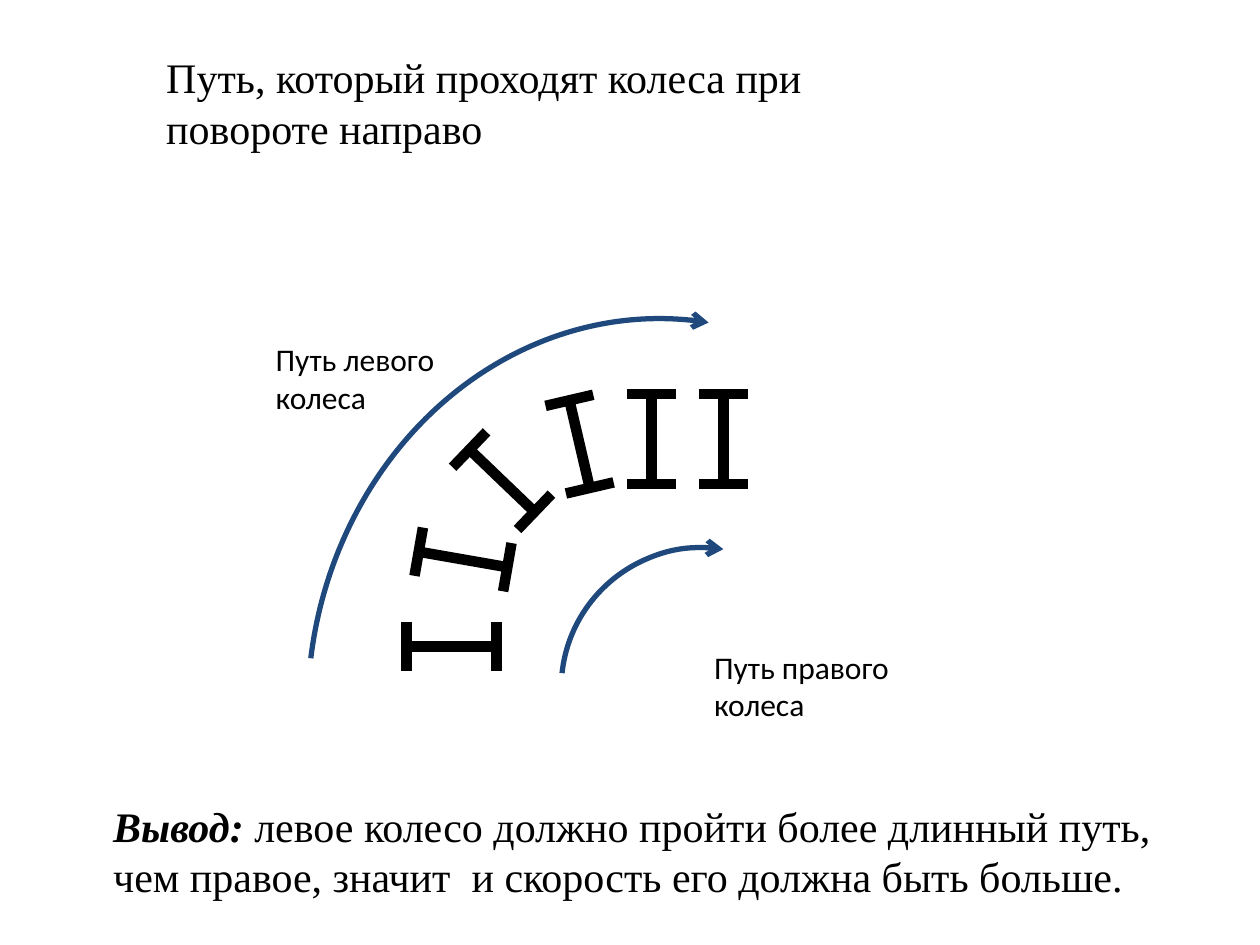
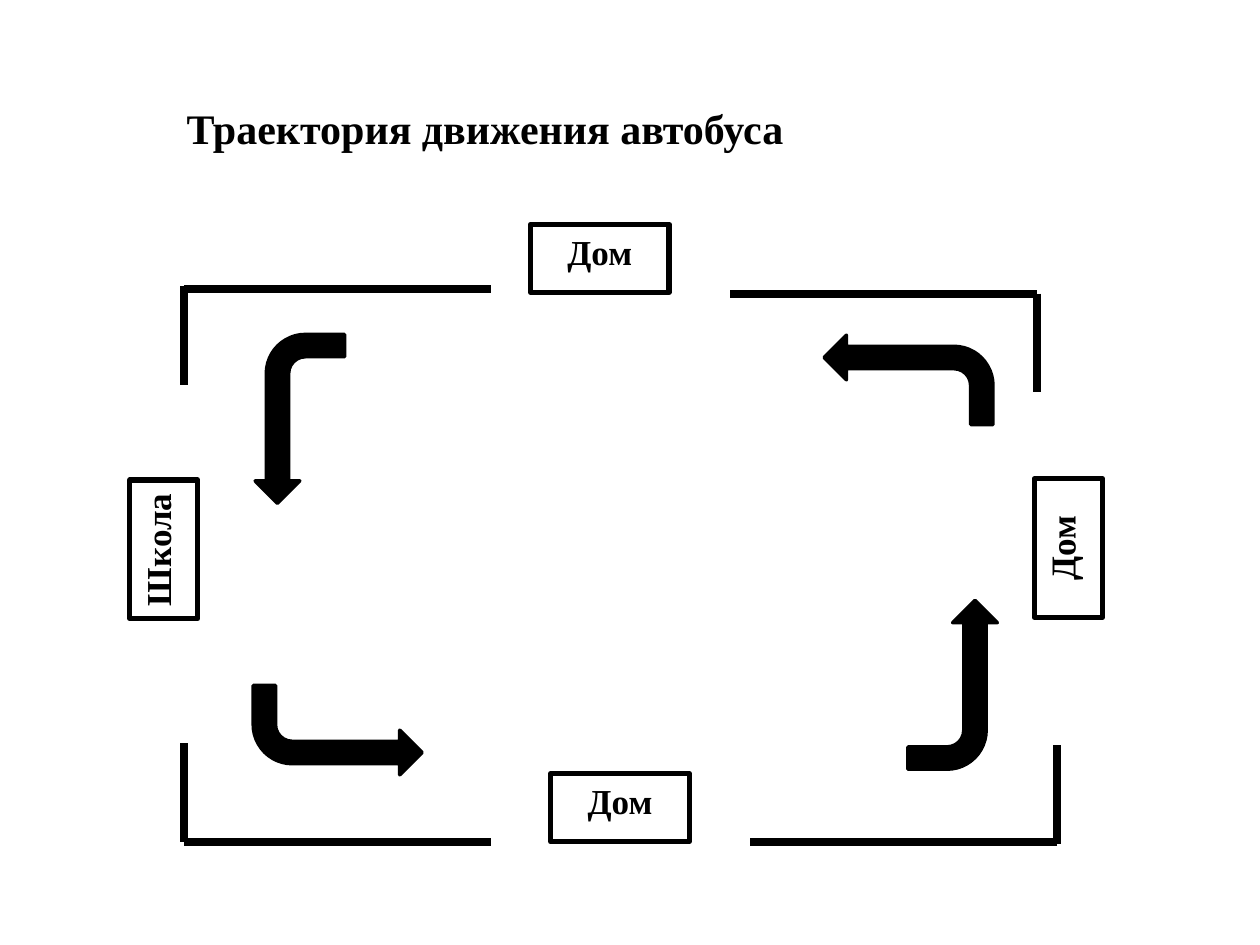
from dataclasses import dataclass
from math import cos, radians, sin

from pptx import Presentation
from pptx.dml.color import RGBColor
from pptx.enum.shapes import MSO_CONNECTOR, MSO_SHAPE
from pptx.enum.text import MSO_ANCHOR, MSO_AUTO_SIZE, PP_ALIGN
from pptx.oxml.ns import qn
from pptx.util import Pt
from lxml.etree import SubElement


@dataclass(frozen=True)
class Theme:
    ink: RGBColor = RGBColor(0x00, 0x00, 0x00)
    route: RGBColor = RGBColor(0x1F, 0x49, 0x7D)
    serif: str = "Times New Roman"
    sans: str = "Calibri"
    heading_size: int = 24
    place_size: int = 20
    label_size: int = 18
    axle_line: float = 6
    road_line: float = 4.5
    thin_line: float = 3
    arrow_line: float = 2


THEME = Theme()

HALF_AXLE = 25.7
HALF_WHEEL = 14
AXLES = [
    (258.1, 369.4, 0),
    (264.6, 319.7, 9.9),
    (286.9, 274.7, 43.8),
    (331.2, 253.8, 76.9),
    (372.2, 250.9, 90),
    (413.3, 250.9, 90),
]
WHEEL_ROUTES = [
    (321.1, 312.5, 160.6, 161.3, 162),
    (153.4, 204.5, 437.8, 392.4, 162.65),
]
WHEEL_LABELS = [
    ("Путь правого колеса", 401, 366.5),
    ("Путь левого колеса", 150.5, 190.8),
]

PLACES = [
    ("Школа", 74.2, 274.3, 0, PP_ALIGN.LEFT),
    ("Дом", 334.8, 421.9, 90, PP_ALIGN.CENTER),
    ("Дом", 591.1, 273.6, 0, PP_ALIGN.CENTER),
    ("Дом", 323.3, 108, 90, PP_ALIGN.CENTER),
]
ROAD_WIDTH = 175.7
ROAD_HEIGHT = 56.5
ROAD_CORNERS = [
    (105.1, 164.9, 1, 1, 1.4),
    (592.6, 167.8, -1, 1, 0),
    (105.1, 481, 1, -1, 0),
    (604.1, 481, -1, -1, 1.4),
]
TURNS = [
    (144.7, 391.7, 0),
    (496.1, 365.8, 270),
    (470.9, 191.5, 180),
    (123.1, 213.8, 90),
]


def write_text(shape, text, *, font=THEME.serif, size=THEME.heading_size,
               bold=False, italic=False, align=PP_ALIGN.LEFT):
    frame = shape.text_frame
    frame.word_wrap = True
    frame.auto_size = MSO_AUTO_SIZE.NONE
    frame.vertical_anchor = MSO_ANCHOR.TOP
    paragraph = frame.paragraphs[0]
    paragraph.alignment = align
    run = paragraph.add_run()
    run.text = text
    run.font.name = font
    run.font.size = Pt(size)
    run.font.bold = bold
    run.font.italic = italic
    run.font.color.rgb = THEME.ink


def add_titled_slide(deck, text, left, top, width, height, **text_format):
    slide = deck.slides.add_slide(deck.slide_layouts[5])
    title = slide.shapes.title
    title.left, title.top = Pt(left), Pt(top)
    title.width, title.height = Pt(width), Pt(height)
    write_text(title, text, **text_format)
    return slide


def add_textbox(slide, left, top, width, height):
    return slide.shapes.add_textbox(Pt(left), Pt(top), Pt(width), Pt(height))


def add_line(shapes, start, end, width):
    line = shapes.add_connector(MSO_CONNECTOR.STRAIGHT, *map(Pt, (*start, *end)))
    line.line.color.rgb = THEME.ink
    line.line.width = Pt(width)
    SubElement(line.element.spPr, qn("a:effectLst"))


def add_outline(slide, preset, left, top, width, height, *,
                line_width=THEME.thin_line, color=THEME.ink, rotation=0, fill=None):
    shape = slide.shapes.add_shape(preset, Pt(left), Pt(top), Pt(width), Pt(height))
    shape.rotation = rotation
    shape.shadow.inherit = False
    shape.line.color.rgb = color
    shape.line.width = Pt(line_width)
    if fill is None:
        shape.fill.background()
    else:
        shape.fill.solid()
        shape.fill.fore_color.rgb = fill
    return shape


def add_axle(shapes, x, y, angle):
    along = cos(radians(angle)), sin(radians(angle))
    across = -along[1], along[0]

    def add_bar(center, direction, half):
        ends = [[c + sign * half * d for c, d in zip(center, direction)]
                for sign in (-1, 1)]
        add_line(shapes, *ends, THEME.axle_line)

    add_bar((x, y), along, HALF_AXLE)
    for side in (-1, 1):
        hub = x + side * HALF_AXLE * along[0], y + side * HALF_AXLE * along[1]
        add_bar(hub, across, HALF_WHEEL)


def add_wheel_route(slide, left, top, width, height, start):
    route = add_outline(slide, MSO_SHAPE.ARC, left, top, width, height,
                        color=THEME.route, rotation=276.1)
    route.adjustments[0] = start
    route.adjustments[1] = 1.49
    SubElement(route.element.spPr.find(qn("a:ln")), qn("a:tailEnd"), type="arrow")


def add_place(slide, name, left, top, rotation, align):
    place = add_outline(slide, MSO_SHAPE.RECTANGLE, left, top, 38.9, 79.2,
                        rotation=rotation)
    write_text(place, name, size=THEME.place_size, bold=True, align=align)
    place.element.txBody.find(qn("a:bodyPr")).set("vert", "vert270")


def add_road_corner(slide, x, y, right, down, overhang):
    add_line(slide.shapes, (x, y), (x + right * ROAD_WIDTH, y), THEME.road_line)
    edge = y - down * overhang
    add_line(slide.shapes, (x, edge), (x, edge + down * ROAD_HEIGHT), THEME.road_line)


def add_turn(slide, left, top, rotation):
    turn = add_outline(slide, MSO_SHAPE.BENT_ARROW, left, top, 96.5, 51.1,
                       line_width=THEME.arrow_line, rotation=rotation, fill=THEME.ink)
    turn.element.spPr.find(qn("a:xfrm")).set("flipV", "1")


def build_wheel_slide(deck):
    slide = add_titled_slide(deck, "Путь, который проходят колеса при повороте направо",
                             87.8, 25.9, 419.8, 65.5)
    axles = slide.shapes.add_group_shape().shapes
    for axle in AXLES:
        add_axle(axles, *axle)
    for route in WHEEL_ROUTES:
        add_wheel_route(slide, *route)
    for label, left, top in WHEEL_LABELS:
        write_text(add_textbox(slide, left, top, 153.4, 51.1), label,
                   font=THEME.sans, size=THEME.label_size)
    conclusion = add_textbox(slide, 57.6, 453.6, 625, 65.5)
    write_text(conclusion, "Вывод:", bold=True, italic=True)
    write_text(conclusion, " левое колесо должно пройти более длинный путь, чем правое, "
                           "значит  и скорость его должна быть больше.")


def build_bus_slide(deck):
    slide = add_titled_slide(deck, "Траектория движения автобуса",
                             99.4, 54.7, 459.4, 36, bold=True)
    for place in PLACES:
        add_place(slide, *place)
    for corner in ROAD_CORNERS:
        add_road_corner(slide, *corner)
    for turn in TURNS:
        add_turn(slide, *turn)


def main():
    deck = Presentation()
    deck.slide_width, deck.slide_height = Pt(720), Pt(540)
    build_wheel_slide(deck)
    build_bus_slide(deck)
    deck.save("out.pptx")


if __name__ == "__main__":
    main()
